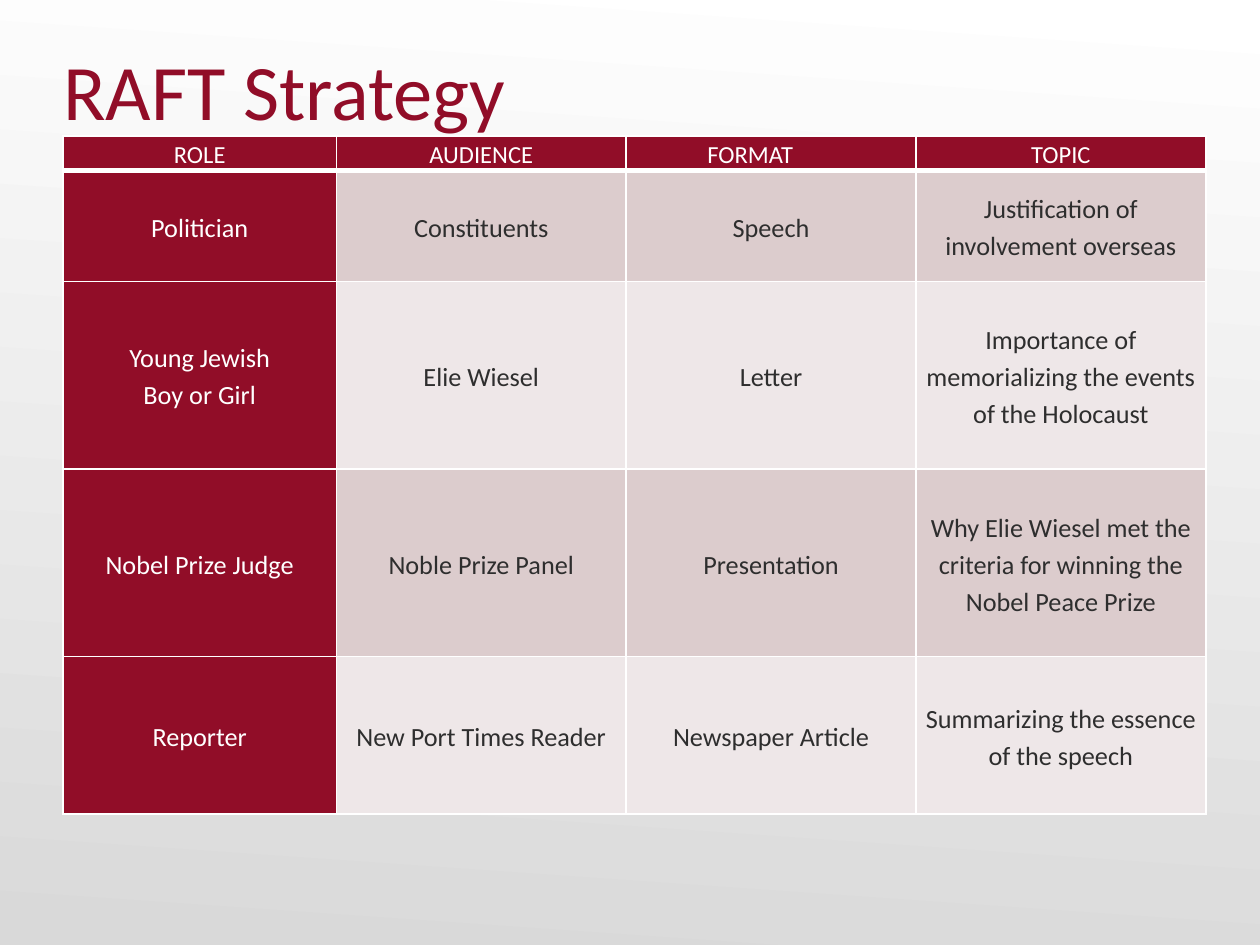
"""Build the RAFT Strategy slide: a title above a role, audience, format and topic table."""
from lxml import etree
from pptx import Presentation
from pptx import util as u
from pptx.dml.color import RGBColor
from pptx.enum import text
from pptx.oxml.ns import qn

TITLE = "RAFT Strategy"
HEADINGS = ["ROLE", "AUDIENCE", "FORMAT", "TOPIC"]
ASSIGNMENTS = [
    ["Politician", "Constituents", "Speech", "Justification of involvement overseas"],
    ["Young Jewish\nBoy or Girl", "Elie Wiesel", "Letter",
     "Importance of memorializing the events of the Holocaust"],
    ["Nobel Prize Judge", "Noble Prize Panel", "Presentation",
     "Why Elie Wiesel met the criteria for winning the Nobel Peace Prize"],
    ["Reporter", "New Port Times Reader", "Newspaper Article",
     "Summarizing the essence of the speech"],
]
COLUMN_WIDTHS = [2.17, 2.3, 2.3, 2.3]
ROW_HEIGHTS = [0.27, 0.88, 1.49, 1.49, 1.25]
FORMAT_HEADING_INSET = 0.4
THEME = {
    "font": "Calibri", "title_size": 44.9, "heading_size": 14, "body_size": 15,
    "accent": "910D28", "light": "FFFFFF", "dark": "2E2E2E",
    "bands": ["DCCCCD", "EEE7E8"], "background": ["FFFFFF", "D9D9D9"],
    "rule": 1, "heading_rule": 3,
}


def add_run(paragraph, words, size, color):
    run = paragraph.add_run()
    run.text = words
    run.font.name = THEME["font"]
    run.font.size = u.Pt(size)
    run.font.color.rgb = RGBColor.from_string(color)


def set_borders(cell, top, bottom):
    properties = cell._tc.get_or_add_tcPr()
    widths = {"L": THEME["rule"], "R": THEME["rule"], "T": top, "B": bottom}
    for side, width in widths.items():
        line = etree.SubElement(properties, qn(f"a:ln{side}"), w=str(u.Pt(width)))
        fill = etree.SubElement(line, qn("a:solidFill"))
        etree.SubElement(fill, qn("a:srgbClr"), val=THEME["light"])


def fill_cell(cell, words, row, column):
    is_heading = row == 0
    is_accent = is_heading or column == 0
    rule, heading_rule = THEME["rule"], THEME["heading_rule"]
    set_borders(cell, heading_rule if row == 1 else rule, heading_rule if is_heading else rule)
    cell.fill.solid()
    fill = THEME["accent"] if is_accent else THEME["bands"][(row - 1) % 2]
    cell.fill.fore_color.rgb = RGBColor.from_string(fill)
    cell.vertical_anchor = text.MSO_ANCHOR.MIDDLE
    cell.margin_left = cell.margin_right = u.Inches(0.07)
    cell.margin_top = cell.margin_bottom = 0
    if words == "FORMAT":
        cell.margin_right = u.Inches(FORMAT_HEADING_INSET)
    frame = cell.text_frame
    for index, line in enumerate(words.split("\n")):
        paragraph = frame.add_paragraph() if index else frame.paragraphs[0]
        paragraph.alignment = text.PP_ALIGN.CENTER
        paragraph.line_spacing = 1.15
        add_run(paragraph, line, THEME["heading_size" if is_heading else "body_size"],
                THEME["light" if is_accent else "dark"])


def add_title(slide):
    title = slide.shapes.title
    title.left, title.top = u.Inches(0.5), u.Inches(0.25)
    title.width, title.height = u.Inches(4.17), u.Inches(0.83)
    frame = title.text_frame
    frame.margin_left = frame.margin_right = frame.margin_bottom = 0
    frame.margin_top = u.Inches(0.07)
    frame.vertical_anchor = text.MSO_ANCHOR.BOTTOM
    frame.paragraphs[0].alignment = text.PP_ALIGN.LEFT
    add_run(frame.paragraphs[0], TITLE, THEME["title_size"], THEME["accent"])


def add_strategy_table(slide):
    rows = [HEADINGS] + ASSIGNMENTS
    table = slide.shapes.add_table(
        len(rows), len(HEADINGS), u.Inches(0.5), u.Inches(1.08),
        u.Inches(sum(COLUMN_WIDTHS)), u.Inches(sum(ROW_HEIGHTS))).table
    for column, width in zip(table.columns, COLUMN_WIDTHS):
        column.width = u.Inches(width)
    for row, height in zip(table.rows, ROW_HEIGHTS):
        row.height = u.Inches(height)
    for r, entries in enumerate(rows):
        for c, words in enumerate(entries):
            fill_cell(table.cell(r, c), words, r, c)


def main():
    deck = Presentation()
    deck.slide_width, deck.slide_height = u.Inches(10), u.Inches(7.5)
    slide = deck.slides.add_slide(deck.slide_layouts[5])
    backdrop = slide.background.fill
    backdrop.gradient()
    backdrop.gradient_angle = 266
    for stop, color in zip(backdrop.gradient_stops, THEME["background"]):
        stop.color.rgb = RGBColor.from_string(color)
    add_title(slide)
    add_strategy_table(slide)
    deck.save("out.pptx")


if __name__ == "__main__":
    main()
